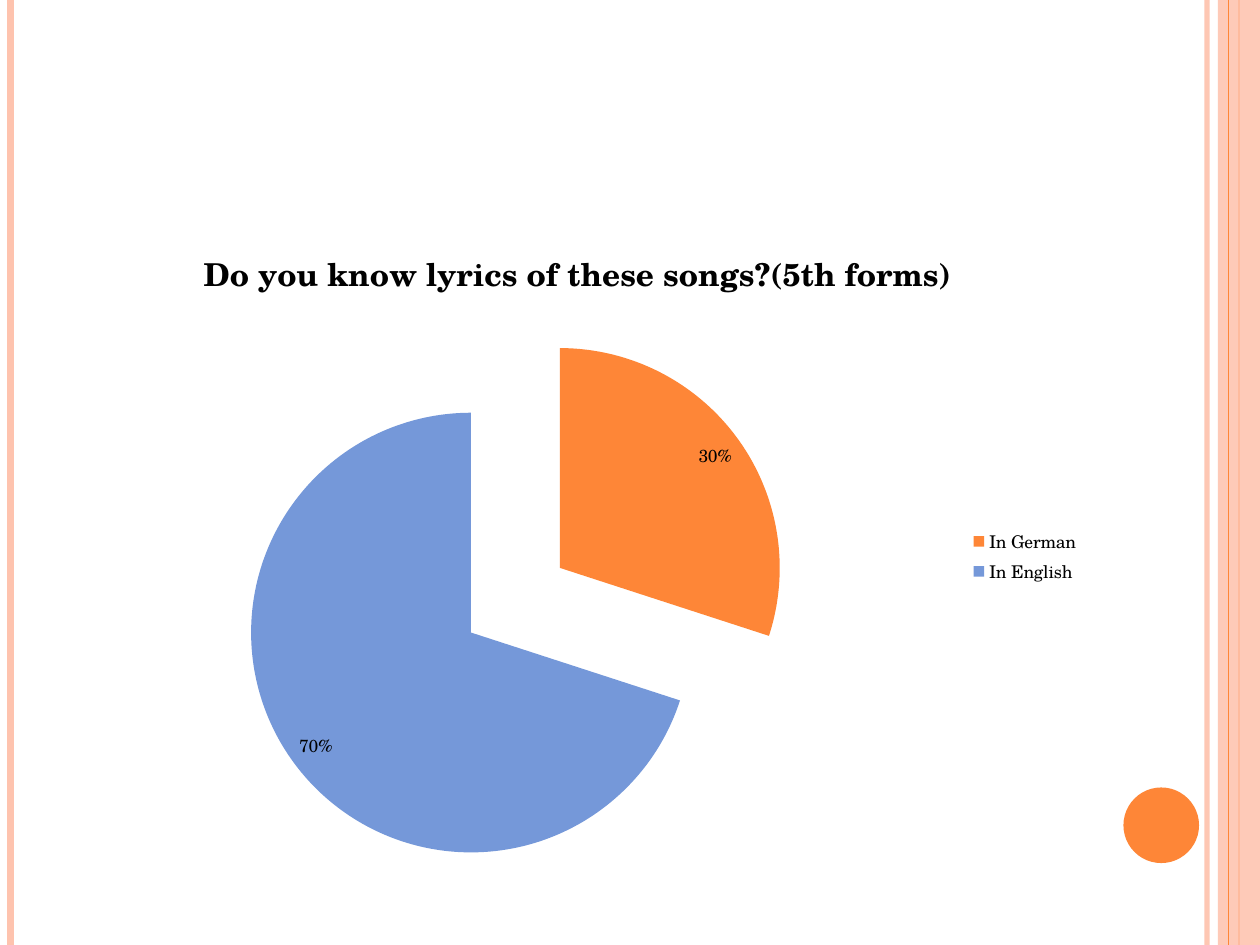
from pptx import Presentation
from pptx.chart.data import CategoryChartData
from pptx.dml.color import RGBColor
from pptx.enum.chart import XL_CHART_TYPE, XL_LABEL_POSITION, XL_LEGEND_POSITION
from pptx.enum.shapes import MSO_CONNECTOR, MSO_SHAPE
from pptx.oxml.ns import qn
from pptx.util import Pt
from lxml.etree import SubElement

FONT = "TeX Gyre Schola"
ORANGE, PEACH, BLUE, BLACK = "FE8637", "FEC3AE", "7598D9", "000000"
SLIDE_WIDTH, SLIDE_HEIGHT = 720, 540
QUESTION = "Do you know lyrics of these songs?(5th forms)"
ANSWERS = [("In German", 30, ORANGE), ("In English", 70, BLUE)]


def color(hex_code):
    return RGBColor.from_string(hex_code)


def paint(fill, hex_code, opacity=100):
    """Make a fill solid, adding an alpha value below full opacity."""
    fill.solid()
    fill.fore_color.rgb = color(hex_code)
    if opacity < 100:
        tint = fill._xPr.find(f"{qn('a:solidFill')}/{qn('a:srgbClr')}")
        SubElement(tint, qn("a:alpha"), val=str(opacity * 1000))


def add_stripe(slide, x, weight, hex_code, opacity=100):
    """Draw a vertical line over the full slide height."""
    stripe = slide.shapes.add_connector(
        MSO_CONNECTOR.STRAIGHT, Pt(x), Pt(0), Pt(x), Pt(SLIDE_HEIGHT))
    stripe.line.width = Pt(weight)
    paint(stripe.line.fill, hex_code, opacity)
    SubElement(stripe._element.spPr, qn("a:effectLst"))


def add_plain_shape(slide, kind, left, top, width, height, hex_code, opacity=100):
    shape = slide.shapes.add_shape(kind, Pt(left), Pt(top), Pt(width), Pt(height))
    shape.shadow.inherit = False
    shape.line.fill.background()
    paint(shape.fill, hex_code, opacity)


def style_font(font, size, bold=False):
    font.name, font.size, font.bold = FONT, Pt(size), bold
    font.color.rgb = color(BLACK)


def explode(series, percent):
    """Move all slices of a pie series outwards."""
    explosion = SubElement(series._element, qn("c:explosion"), val=str(percent))
    series._element.find(qn("c:tx")).addnext(explosion)


def add_answer_pie(slide, left, top, width, height):
    answers = CategoryChartData(number_format="0")
    answers.categories = [name for name, _, _ in ANSWERS]
    answers.add_series(QUESTION, [share for _, share, _ in ANSWERS])
    chart = slide.shapes.add_chart(
        XL_CHART_TYPE.PIE, Pt(left), Pt(top), Pt(width), Pt(height), answers).chart
    style_font(chart.font, 10)

    chart.has_title = True
    heading = chart.chart_title.text_frame.paragraphs[0].add_run()
    heading.text = QUESTION
    style_font(heading.font, 18, bold=True)
    chart.chart_title.include_in_layout = False

    chart.has_legend = True
    chart.legend.position = XL_LEGEND_POSITION.RIGHT
    chart.legend.include_in_layout = False

    pie = chart.plots[0]
    pie.vary_by_categories = True
    series = pie.series[0]
    explode(series, 25)
    for index, (_, _, hex_code) in enumerate(ANSWERS):
        paint(series.points[index].format.fill, hex_code)

    labels = series.data_labels
    labels.show_percentage, labels.show_value = True, False
    labels.number_format, labels.number_format_is_linked = "0%", False
    labels.position = XL_LABEL_POSITION.INSIDE_END
    style_font(labels.font, 10)


def main():
    deck = Presentation()
    deck.slide_width, deck.slide_height = Pt(SLIDE_WIDTH), Pt(SLIDE_HEIGHT)
    slide = deck.slides.add_slide(deck.slide_layouts[6])

    add_stripe(slide, 689.76, 3, PEACH, opacity=93)
    add_stripe(slide, 6, 4.5, PEACH)
    add_stripe(slide, 708, 1.5, ORANGE)
    add_plain_shape(slide, MSO_SHAPE.RECTANGLE, 696, 0, 24, SLIDE_HEIGHT, PEACH, opacity=87)
    add_stripe(slide, 702, 0.75, ORANGE)
    add_plain_shape(slide, MSO_SHAPE.OVAL, 642, 450, 43.2, 43.2, ORANGE)
    add_answer_pie(slide, 36, 126, 588, 384)

    deck.save("out.pptx")


if __name__ == "__main__":
    main()
